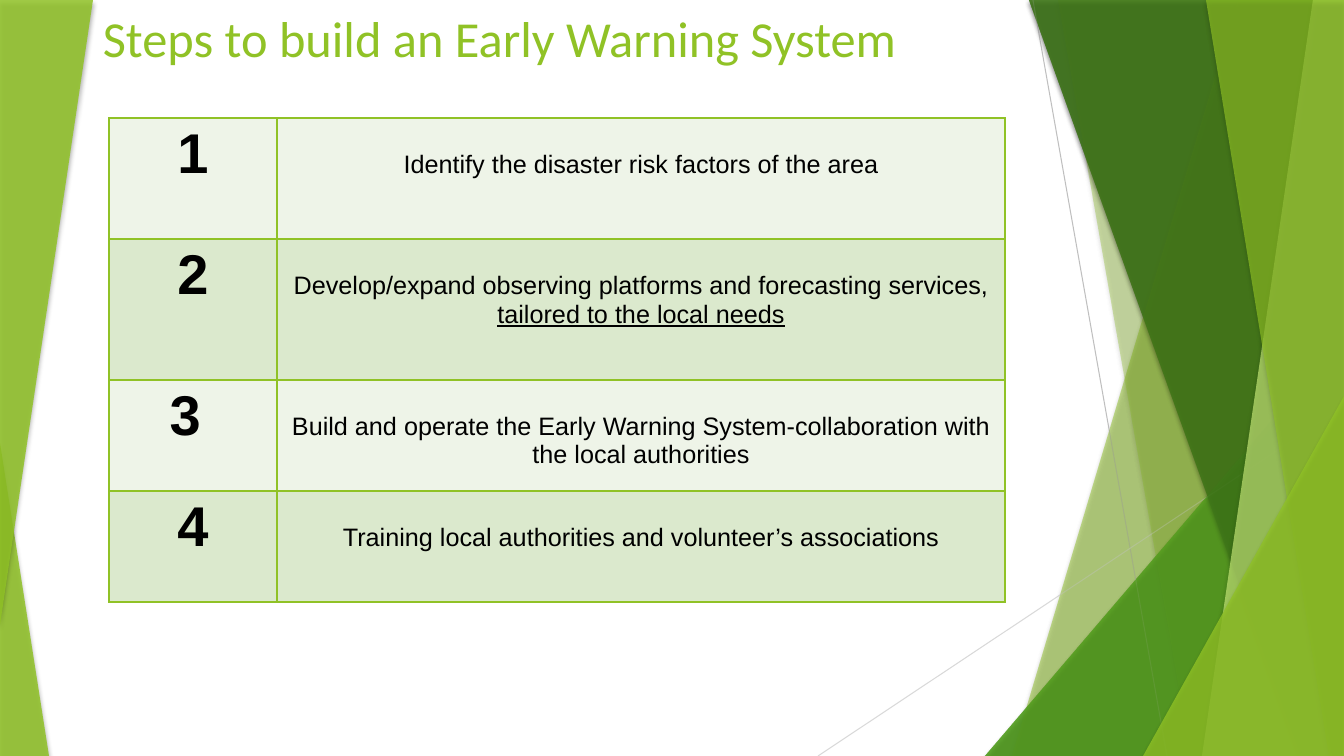
from lxml.etree import SubElement
from pptx import Presentation
from pptx.dml.color import RGBColor
from pptx.enum.shapes import MSO_CONNECTOR, MSO_SHAPE
from pptx.enum.text import PP_ALIGN
from pptx.oxml.ns import qn
from pptx.util import Emu, Pt

WIDTH, HEIGHT = 1344, 756
GREEN = "90C226"

BANDS = [
    (1238, 1012, GREEN, 30),
    (1058, 1191, GREEN, 20),
    (985, 336, "54A021", 72),
    (1029, 1301, "3F7819", 70),
    (1313, 1202, "C0E474", 70),
    (1206, 1329, GREEN, 65),
    (1143, 396, GREEN, 80),
]
WEDGES = {2, 6}

STEPS = [
    ("1", ["Identify the disaster risk factors of the area"], 121),
    ("2", ["Develop/expand observing platforms and forecasting services, ",
           "tailored to the local needs"], 141),
    ("3 ", ["Build and operate the Early Warning System-collaboration with "
            "the local authorities"], 111),
    ("4", ["Training local authorities and volunteer’s associations"], 111),
]


def px(length):
    return Emu(round(length * 914400 / 100.8))


def color(value):
    return RGBColor.from_string(value)


def add_alpha(element, percent):
    SubElement(element, qn("a:alpha"), val=str(percent * 1000))


def style_glass(shape, fill, opacity):
    shape.fill.solid()
    shape.fill.fore_color.rgb = color(fill)
    add_alpha(shape._element.spPr.find(qn("a:solidFill"))[0], opacity)
    shape.line.fill.background()
    shape.shadow.inherit = False
    effects = shape._element.spPr.find(qn("a:effectLst"))
    shadow = SubElement(effects, qn("a:outerShdw"), blurRad=str(Pt(3)), dist=str(Pt(2)),
                        dir="5400000", algn="ctr", rotWithShape="0")
    add_alpha(SubElement(shadow, qn("a:srgbClr"), val="000000"), 35)


def add_wedge(page, box, apex, fill, opacity, rotation=0):
    wedge = page.shapes.add_shape(MSO_SHAPE.ISOSCELES_TRIANGLE, *map(px, box))
    wedge.adjustments[0] = apex
    wedge.rotation = rotation
    style_glass(wedge, fill, opacity)


def add_band(page, top_left, bottom_left, fill, opacity):
    outline = page.shapes.build_freeform(px(top_left), 0)
    outline.add_line_segments([(px(WIDTH), 0), (px(WIDTH), px(HEIGHT)),
                               (px(bottom_left), px(HEIGHT))], close=True)
    style_glass(outline.convert_to_shape(), fill, opacity)


def add_right_facets(page):
    for index, (first, second, fill, opacity) in enumerate(BANDS):
        if index in WEDGES:
            box = (first, second, WIDTH - first, HEIGHT - second)
            add_wedge(page, box, 1, fill, opacity)
        else:
            add_band(page, first, second, fill, opacity)


def add_hairline(page, ends, stroke):
    line = page.shapes.add_connector(MSO_CONNECTOR.STRAIGHT, *map(px, ends))
    line.line.color.rgb = color(stroke)
    line.line.width = Pt(0.75)
    SubElement(line._element.spPr, qn("a:effectLst"))


def add_backdrop(page):
    add_right_facets(page)
    add_wedge(page, (0, 443, 49, 313), 0, GREEN, 85)
    add_hairline(page, (1033, 0, 1167, HEIGHT), "BFBFBF")
    add_hairline(page, (WIDTH, 406, 818, HEIGHT), "D9D9D9")
    add_right_facets(page)
    add_wedge(page, (0, 0, 93, 625), 1, GREEN, 85, 180)


def add_span(para, text, size, font, ink, bold=False, underline=False):
    span = para.add_run()
    span.text = text
    span.font.size = Pt(size)
    span.font.name = font
    span.font.bold = bold
    span.font.underline = underline
    span.font.color.rgb = color(ink)


def add_title(page, box):
    frame = page.shapes.add_textbox(*map(px, box)).text_frame
    frame.word_wrap = True
    add_span(frame.paragraphs[0], "Steps to build an Early Warning System",
             36, "Calibri", GREEN)


def style_cell(cell, fill):
    properties = cell._tc.get_or_add_tcPr()
    for side in ("L", "R", "T", "B"):
        border = SubElement(properties, qn(f"a:ln{side}"), w=str(Pt(1)))
        SubElement(SubElement(border, qn("a:solidFill")), qn("a:srgbClr"), val=GREEN)
    cell.fill.solid()
    cell.fill.fore_color.rgb = color(fill)


def add_steps(page, left, top, column_widths):
    heights = [height for _, _, height in STEPS]
    table = page.shapes.add_table(len(STEPS), 2, px(left), px(top),
                                  px(sum(column_widths)), px(sum(heights))).table
    table.first_row = False
    table.horz_banding = False
    for column, width in zip(table.columns, column_widths):
        column.width = px(width)
    for index, (number, parts, height) in enumerate(STEPS):
        table.rows[index].height = px(height)
        number_cell, step_cell = table.rows[index].cells
        for cell in (number_cell, step_cell):
            style_cell(cell, ("EEF4E8", "DBE9CD")[index % 2])
            cell.text_frame.paragraphs[0].alignment = PP_ALIGN.CENTER
        add_span(number_cell.text_frame.paragraphs[0], number, 40, "Arial", "000000", True)
        step_cell.margin_top = px(33)
        for order, part in enumerate(parts):
            add_span(step_cell.text_frame.paragraphs[0], part, 18, "Arial", "000000",
                     underline=order > 0)


def main():
    deck = Presentation()
    deck.slide_width, deck.slide_height = px(WIDTH), px(HEIGHT)
    page = deck.slides.add_slide(deck.slide_layouts[6])
    add_backdrop(page)
    add_title(page, (93, 2, 1041, 91))
    add_steps(page, 109, 118, (168, 728))
    deck.save("out.pptx")


if __name__ == "__main__":
    main()
